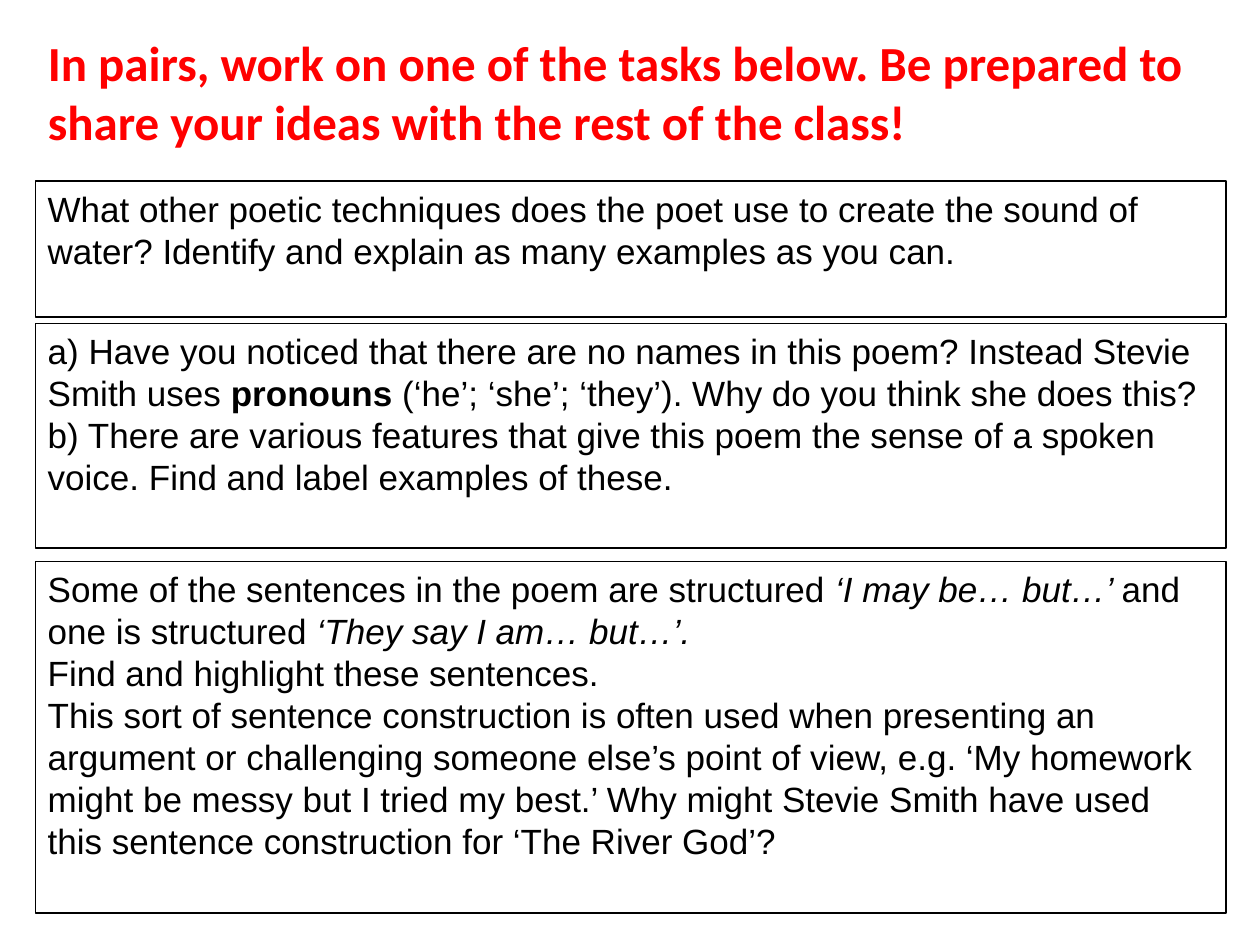
"""Build a slide of three paired poetry tasks under a red instruction title."""
from pptx import Presentation
from pptx.dml.color import RGBColor
from pptx.enum import shapes, text
from pptx.util import Pt

RED = RGBColor(0xFF, 0x00, 0x00)
BLACK = RGBColor(0x00, 0x00, 0x00)
LEFT, WIDTH = Pt(20.16), Pt(680.4)

TASKS = [
    (103.4, 77.8, [
        [("What other poetic techniques does the poet use to create the sound of water? "
          "Identify and explain as many examples as you can.", "")],
    ]),
    (184.8, 128.4, [
        [("a) Have you noticed that there are no names in this poem? "
          "Instead Stevie Smith uses ", ""),
         ("pronouns", "bold"),
         (" (‘he’; ‘she’; ‘they’). Why do you think she does this?", "")],
        [("b) There are various features that give this poem the sense of a spoken voice. "
          "Find and label examples of these.", "")],
    ]),
    (320.8, 201, [
        [("Some of the sentences in the poem are structured ", ""),
         ("‘I may be… but…’ ", "italic"),
         ("and one is structured ", ""),
         ("‘They say I am… but…’.", "italic")],
        [("Find and highlight these sentences.", "")],
        [("This sort of sentence construction is often used when presenting an argument or "
          "challenging someone else’s point of view, e.g. ‘My homework might be messy but "
          "I tried my best.’ Why might Stevie Smith have used this sentence construction "
          "for ‘The River God’?", "")],
    ]),
]


def format_frame(frame):
    frame.word_wrap = True
    frame.auto_size = text.MSO_AUTO_SIZE.NONE
    frame.vertical_anchor = text.MSO_ANCHOR.TOP


def format_paragraph(paragraph, name, size, color):
    paragraph.alignment = text.PP_ALIGN.LEFT
    paragraph.font.name = name
    paragraph.font.size = Pt(size)
    paragraph.font.color.rgb = color


deck = Presentation()
deck.slide_width, deck.slide_height = Pt(720), Pt(540)
slide = deck.slides.add_slide(deck.slide_layouts[5])

instruction = slide.shapes.title
instruction.left, instruction.top = LEFT, Pt(15.1)
instruction.width, instruction.height = WIDTH, Pt(74.9)
instruction.text_frame.text = (
    "In pairs, work on one of the tasks below. "
    "Be prepared to share your ideas with the rest of the class!")
format_frame(instruction.text_frame)
heading = instruction.text_frame.paragraphs[0]
format_paragraph(heading, "Calibri", 28, RED)
heading.font.bold = True

for top, height, paragraphs in TASKS:
    task = slide.shapes.add_shape(
        shapes.MSO_SHAPE.RECTANGLE, LEFT, Pt(top), WIDTH, Pt(height))
    task.shadow.inherit = False
    task.fill.background()
    task.line.color.rgb = BLACK
    task.line.width = Pt(0.75)
    format_frame(task.text_frame)
    for index, pieces in enumerate(paragraphs):
        question = (task.text_frame.add_paragraph() if index
                    else task.text_frame.paragraphs[0])
        format_paragraph(question, "Arial", 20, BLACK)
        for wording, emphasis in pieces:
            run = question.add_run()
            run.text = wording
            if emphasis:
                setattr(run.font, emphasis, True)

deck.save("out.pptx")
